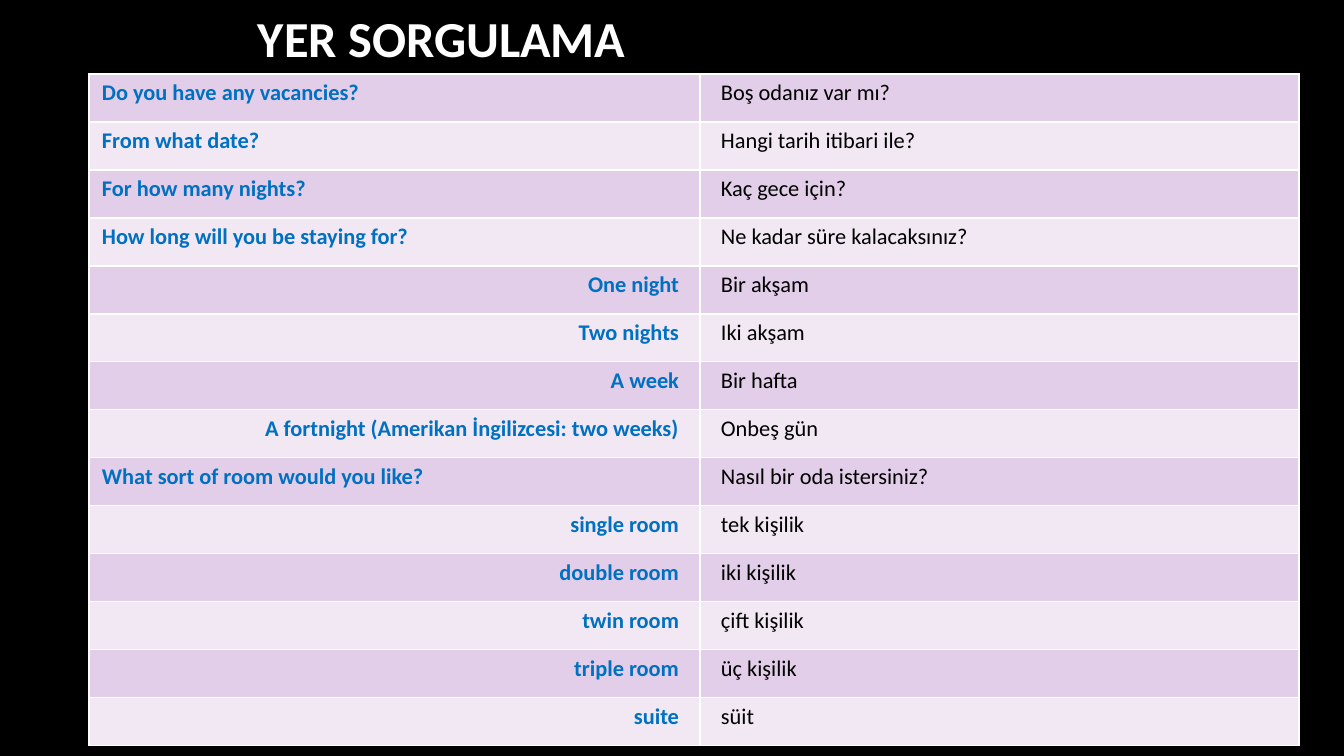
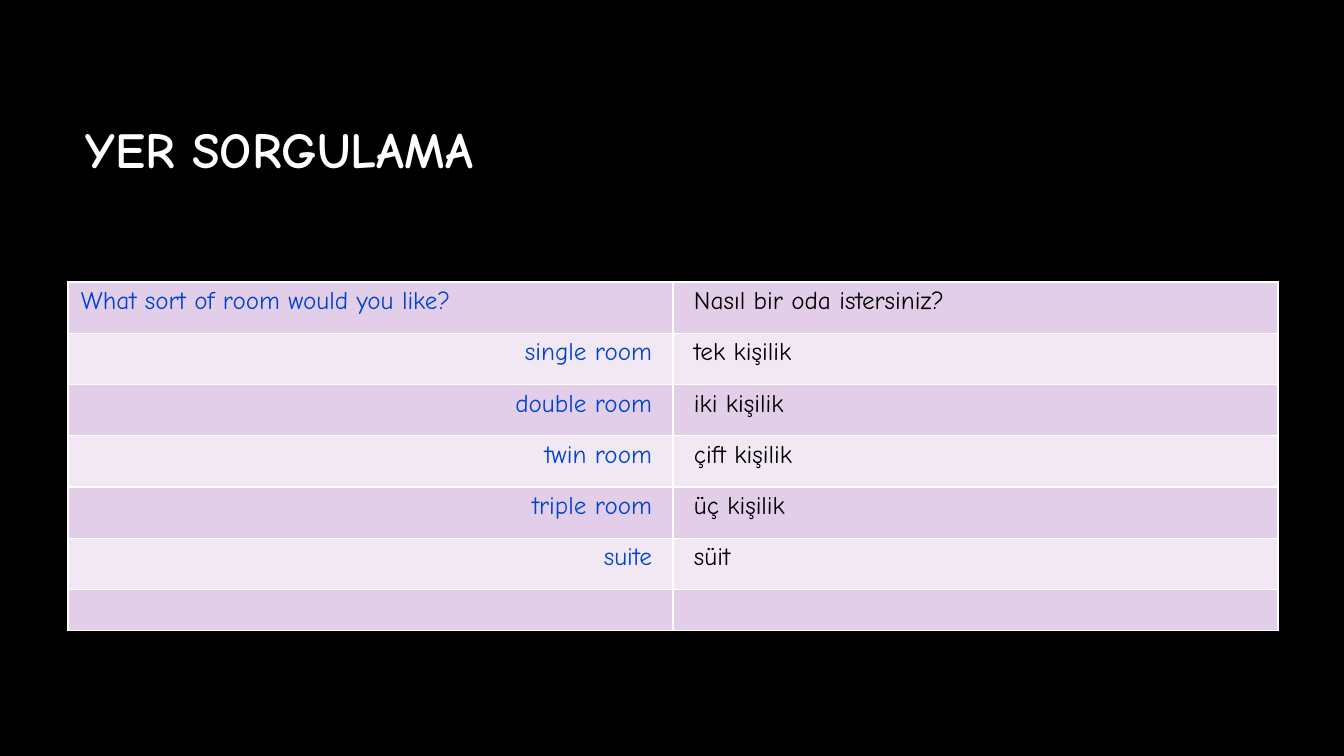
"""Builds two slides of hotel booking phrases in English and Turkish."""
from lxml import etree
from pptx import Presentation
from pptx.dml.color import RGBColor
from pptx.enum.text import MSO_ANCHOR, PP_ALIGN
from pptx.oxml.ns import qn
from pptx.util import Emu, Pt

LEFT, RIGHT = PP_ALIGN.LEFT, PP_ALIGN.RIGHT
MIDDLE = MSO_ANCHOR.MIDDLE
SCALE = 12192000 / 1344
HUES = {"back": "000000", "title": "FFFFFF", "text": "000000", "line": "FFFFFF",
        "dark": "E3CEE9", "light": "F1E8F4", "blue": "0070C0", "royal": "0044CC"}
TITLE = "YER SORGULAMA"

ASKS = [
    ("Do you have any vacancies?", "Boş odanız var mı?", LEFT, 13),
    ("From what date?", "Hangi tarih itibari ile?", LEFT, 13),
    ("For how many nights?", "Kaç gece için?", LEFT, 13),
    ("How long will you be staying for?", "Ne kadar süre kalacaksınız?", LEFT, 13),
    ("One night", "Bir akşam", RIGHT, 13),
    ("Two nights", "Iki akşam", RIGHT, 13),
    ("A week", "Bir hafta", RIGHT, 13),
    ("A fortnight (Amerikan İngilizcesi: two weeks)", "Onbeş gün", RIGHT, 13),
]
ROOMS = [
    ("What sort of room would you like?", "Nasıl bir oda istersiniz?", LEFT, 13),
    ("single room", "tek kişilik", RIGHT, 35),
    ("double room", "iki kişilik", RIGHT, 35),
    ("twin room", "çift kişilik", RIGHT, 35),
    ("triple room", "üç kişilik", RIGHT, 35),
    ("suite", "süit", RIGHT, 35),
]
BLANK = ("", "", LEFT, 13)

PAGES = [
    {"font": "Calibri", "head": (248, 0, 852, 75), "grid": (89, 74), "cols": (611, 599),
     "high": 48, "size": 16, "hue": "blue", "bold": True, "rows": ASKS + ROOMS},
    {"font": "Comic Neue", "head": (76, 68, 1117, 160), "grid": (68, 282), "cols": (605, 605),
     "high": 50, "size": 18, "hue": "royal", "bold": False, "rows": ROOMS + [BLANK]},
]
BLANK_HIGH = 41


def px(num):
    return Emu(round(num * SCALE))


def write(para, text, hue, **style):
    run = para.add_run()
    run.text = text
    run.font.color.rgb = RGBColor.from_string(HUES[hue])
    for key, value in style.items():
        setattr(run.font, key, value)


deck = Presentation()
deck.slide_width, deck.slide_height = px(1344), px(756)

for page in PAGES:
    slide = deck.slides.add_slide(deck.slide_layouts[6])
    back = slide.background.fill
    back.solid()
    back.fore_color.rgb = RGBColor.from_string(HUES["back"])

    frame = slide.shapes.add_textbox(*map(px, page["head"])).text_frame
    frame.word_wrap = True
    frame.vertical_anchor = MIDDLE
    write(frame.paragraphs[0], TITLE, "title", name=page["font"], size=Pt(36), bold=True)

    rows = page["rows"]
    highs = [page["high"] if row[0] else BLANK_HIGH for row in rows]
    box = (*page["grid"], sum(page["cols"]), sum(highs))
    table = slide.shapes.add_table(len(rows), 2, *map(px, box)).table
    table.first_row = table.horz_banding = False
    for col, wide in zip(table.columns, page["cols"]):
        col.width = px(wide)

    for num, (english, turkish, align, inset) in enumerate(rows):
        table.rows[num].height = px(highs[num])
        sides = [(english, page["hue"], page["bold"], align, inset, 21),
                 (turkish, "text", False, LEFT, 21, 13)]
        for cell, (text, hue, bold, side, left, right) in zip(table.rows[num].cells, sides):
            props = cell._tc.get_or_add_tcPr()
            for tag in ("a:lnL", "a:lnR", "a:lnT", "a:lnB"):
                line = etree.SubElement(props, qn(tag), w=str(Pt(1)))
                fill = etree.SubElement(line, qn("a:solidFill"))
                etree.SubElement(fill, qn("a:srgbClr"), val=HUES["line"])
            cell.fill.solid()
            shade = HUES["light" if num % 2 else "dark"]
            cell.fill.fore_color.rgb = RGBColor.from_string(shade)
            if text:
                margins = {"left": left, "top": 5, "right": right, "bottom": 16}
                for edge, gap in margins.items():
                    setattr(cell, f"margin_{edge}", px(gap))
                para = cell.text_frame.paragraphs[0]
                para.alignment = side
                write(para, text, hue, name=page["font"], size=Pt(page["size"]), bold=bold)

deck.save("out.pptx")
